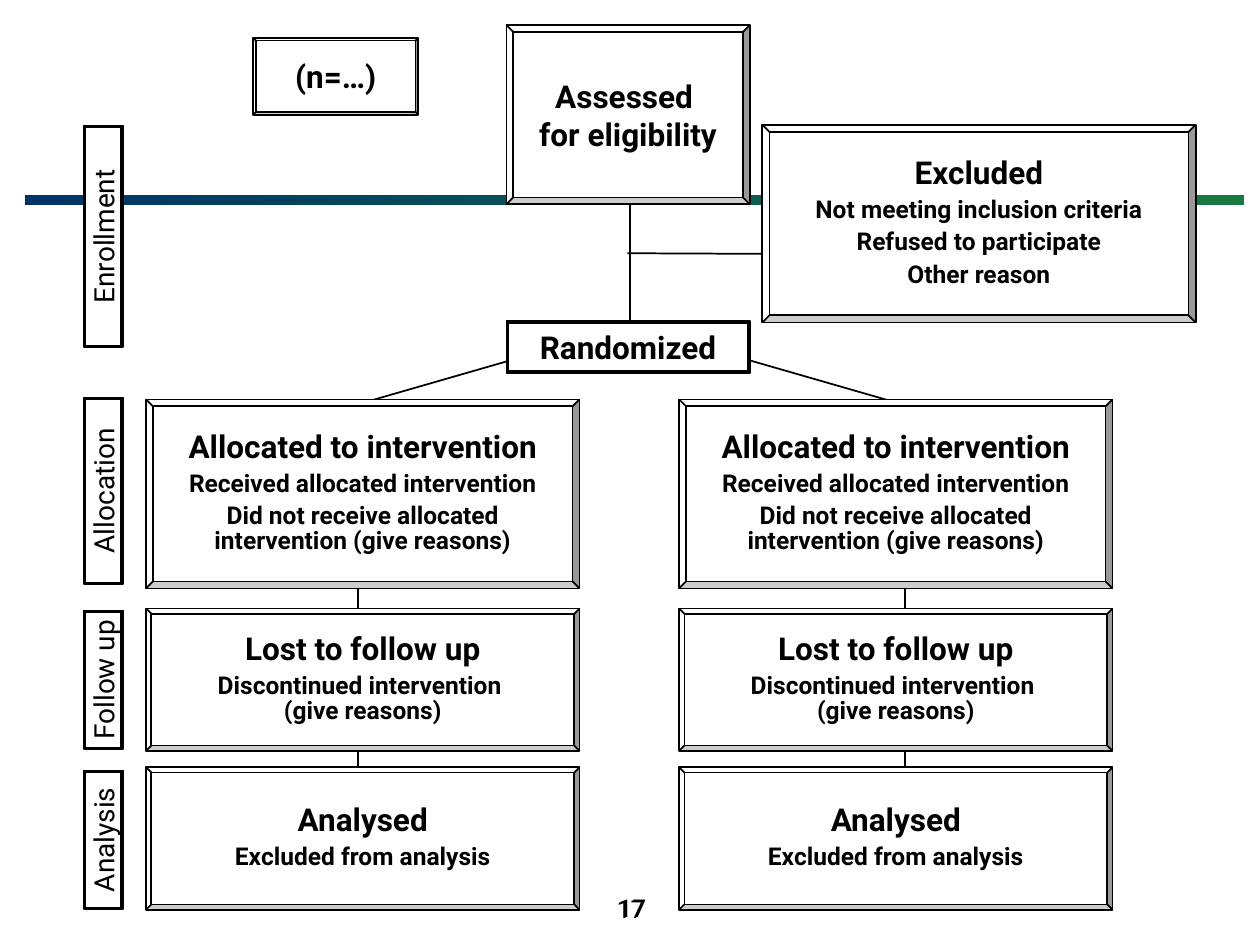
import pptx
import pptx.util
import pptx.dml.color
import pptx.enum.shapes
import pptx.enum.text
import lxml.etree

PX = 9144
FONT = "Roboto"
SHAPE = pptx.enum.shapes.MSO_SHAPE
ANCHOR = pptx.enum.text.MSO_ANCHOR
CENTER = pptx.enum.text.PP_ALIGN.CENTER
rgb = pptx.dml.color.RGBColor.from_string

prs = pptx.Presentation()
prs.slide_width = 1000 * PX
prs.slide_height = 750 * PX
s = prs.slides.add_slide(prs.slide_layouts[6])


def add_line(x1, y1, x2, y2):
    cx = s.shapes.add_connector(
        pptx.enum.shapes.MSO_CONNECTOR.STRAIGHT, x1 * PX, y1 * PX, x2 * PX, y2 * PX)
    cx.line.color.rgb = rgb("000000")
    cx.line.width = pptx.util.Pt(1)
    lxml.etree.SubElement(cx._element.spPr, pptx.oxml.ns.qn("a:effectLst"))


def add_box(x, y, w, h, lines, size=18, bold=True, rotation=0):
    sp = s.shapes.add_shape(SHAPE.BEVEL, x * PX, y * PX, w * PX, h * PX)
    sp.adjustments[0] = 0.037
    sp.rotation = rotation
    sp.shadow.inherit = False
    sp.fill.solid()
    sp.fill.fore_color.rgb = rgb("FFFFFF")
    sp.line.color.rgb = rgb("000000")
    sp.line.width = pptx.util.Pt(1)
    tf = sp.text_frame
    tf.word_wrap = False
    tf.vertical_anchor = ANCHOR.MIDDLE
    for i, text in enumerate(lines):
        p = tf.add_paragraph() if i else tf.paragraphs[0]
        p.text = text
        p.alignment = CENTER
        p.font.name = FONT
        p.font.size = pptx.util.Pt(14 if i else size)
        p.font.bold = bold
        p.font.color.rgb = rgb("000000")
        if len(lines) > 1:
            p.line_spacing = 0.85
            p.space_after = pptx.util.Pt(1.4)
            if i:
                p.space_before = pptx.util.Pt(2.8)


bar = s.shapes.add_shape(SHAPE.RECTANGLE, 20 * PX, 155 * PX, 967 * PX, 8 * PX)
bar.shadow.inherit = False
bar.line.fill.background()
bar.fill.gradient()
bar.fill.gradient_angle = 0
for stop, color, position in zip(bar.fill.gradient_stops, ("003366", "187A40"), (0, 1)):
    stop.color.rgb = rgb(color)
    stop.position = position

for x, y, w in ((342, 683, 317), (398, 682, 208)):
    number = s.shapes.add_textbox(x * PX, y * PX, w * PX, 50 * PX)
    tf = number.text_frame
    tf.word_wrap = True
    tf.vertical_anchor = ANCHOR.BOTTOM
    tf.margin_bottom = 0
    p = tf.paragraphs[0]
    p.text = "17"
    p.alignment = CENTER
    p.font.name = FONT
    p.font.size = pptx.util.Pt(14)
    p.font.color.rgb = rgb("000000")

add_line(720, 202, 498, 201)
add_line(500, 139, 500, 281)
add_box(605, 99, 344, 157, [
    "Excluded", "Not meeting inclusion criteria", "Refused to participate", "Other reason"])
add_box(402, 20, 193, 142, ["Assessed \vfor eligibility"])
add_box(201, 30, 131, 61, ["(n=…)"])
add_line(581, 282, 713, 320)
add_line(419, 282, 287, 320)
add_box(402, 255, 193, 41, ["Randomized"])

stages = [
    (317, 150, ["Allocated to intervention", "Received allocated intervention",
                "Did not receive allocated\vintervention (give reasons)"]),
    (483, 113, ["Lost to follow up", "Discontinued intervention \v(give reasons)"]),
    (609, 113, ["Analysed", "Excluded from analysis"]),
]
for left, line_x in ((539, 718), (116, 284)):
    add_line(line_x, 318, line_x, 690)
    for top, height, lines in stages:
        add_box(left, top, 344, height, lines)

phases = [("Analysis", 651, 110), ("Follow up", 524, 110),
          ("Allocation", 374, 148), ("Enrollment", 172, 176)]
for name, top, length in phases:
    add_box(82 - length // 2, top, length, 31, [name], size=16, bold=False, rotation=270)

prs.save("out.pptx")
